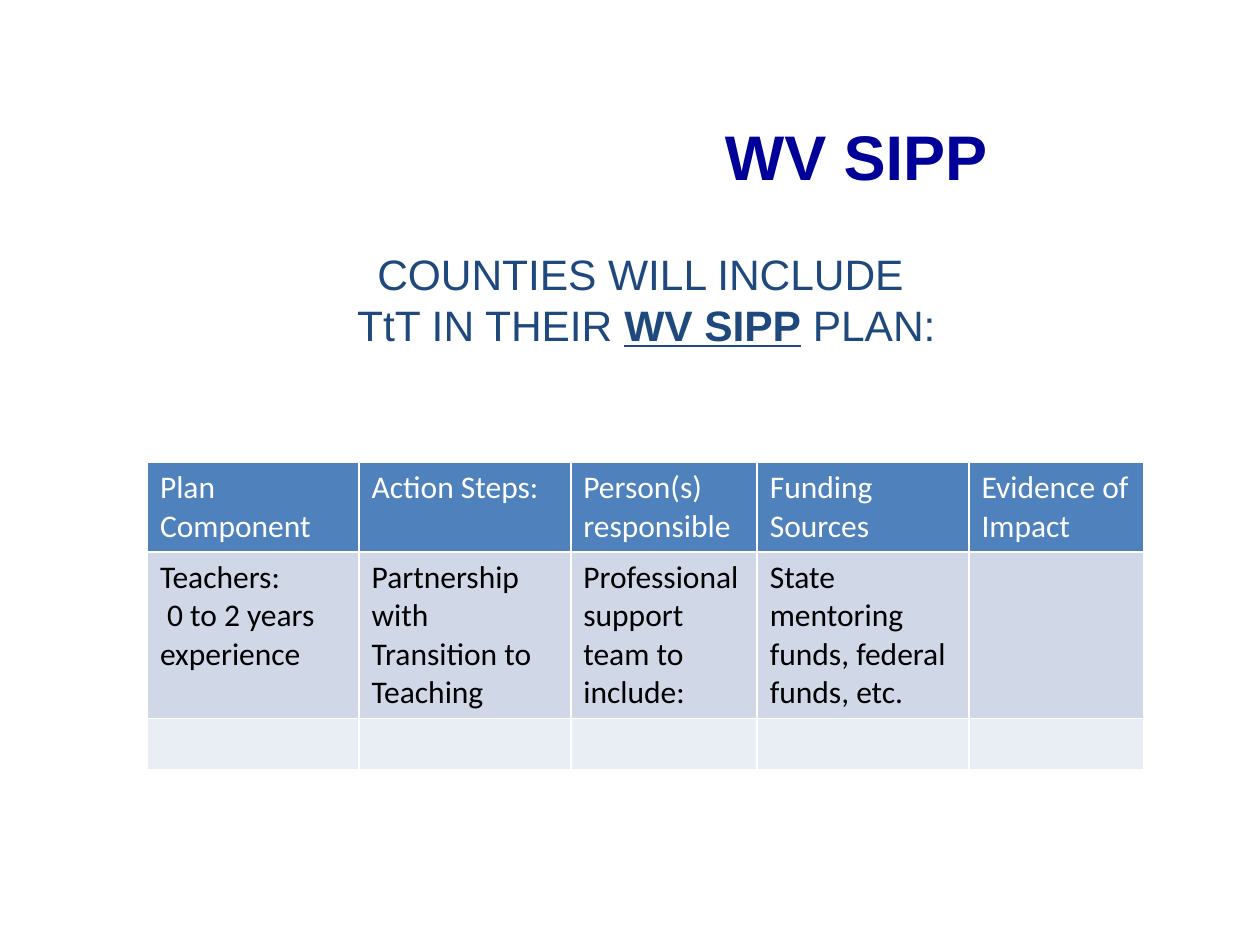
import pptx
import pptx.util
import pptx.dml.color
import pptx.enum.text
from dataclasses import dataclass


@dataclass(frozen=True)
class Theme:
    heading_font: str = "Arial"
    table_font: str = "Calibri"
    heading_size: float = 36
    title_size: float = 24.3
    title_leading: float = 29.1
    table_size: float = 18
    heading: str = "000099"
    title: str = "1F497D"
    header_text: str = "FFFFFF"
    body_text: str = "000000"
    row_fills: tuple = ("4F81BD", "D0D8E8", "E9EDF4")


theme = Theme()
Inches = pptx.util.Inches
Color = pptx.dml.color.RGBColor.from_string


def add_span(para, text, font, size, color, bold=False, underline=False):
    span = para.add_run()
    span.text = text
    span.font.name = font
    span.font.size = pptx.util.Pt(size)
    span.font.color.rgb = Color(color)
    span.font.bold = bold
    span.font.underline = underline


def set_frame(box, left, top, width, height):
    box.left, box.top = Inches(left), Inches(top)
    box.width, box.height = Inches(width), Inches(height)
    frame = box.text_frame
    frame.word_wrap = True
    frame.auto_size = pptx.enum.text.MSO_AUTO_SIZE.NONE
    frame.vertical_anchor = pptx.enum.text.MSO_ANCHOR.TOP
    para = frame.paragraphs[0]
    para.alignment = pptx.enum.text.PP_ALIGN.CENTER
    return para


deck = pptx.Presentation()
deck.slide_width, deck.slide_height = Inches(10), Inches(7.5)
page = deck.slides.add_slide(deck.slide_layouts[5])

para = set_frame(page.shapes.title, 1.17, 1.92, 7.92, 1.33)
para.line_spacing = pptx.util.Pt(theme.title_leading)
title_style = (theme.heading_font, theme.title_size, theme.title)
add_span(para, "COUNTIES WILL INCLUDE ", *title_style)
para.add_line_break()
add_span(para, "TtT IN THEIR ", *title_style)
add_span(para, "WV SIPP", *title_style, bold=True, underline=True)
add_span(para, " PLAN:", *title_style)

column_widths = [1.68, 1.68, 1.48, 1.68, 1.39]
row_heights = [0.7, 1.32, 0.41]
plan_rows = [
    ["Plan Component", "Action Steps:", "Person(s) responsible",
     "Funding Sources", "Evidence of Impact"],
    ["Teachers:\n 0 to 2 years experience",
     "Partnership with Transition to Teaching",
     "Professional support team to include:",
     "State mentoring funds, federal funds, etc.", ""],
    [""] * 5,
]
plan_table = page.shapes.add_table(
    len(row_heights), len(column_widths), Inches(1.17), Inches(3.67),
    Inches(sum(column_widths)), Inches(sum(row_heights))).table
for column, width in zip(plan_table.columns, column_widths):
    column.width = Inches(width)
for row_index, texts in enumerate(plan_rows):
    row = plan_table.rows[row_index]
    row.height = Inches(row_heights[row_index])
    color = theme.body_text if row_index else theme.header_text
    for cell, text in zip(row.cells, texts):
        cell.fill.solid()
        cell.fill.fore_color.rgb = Color(theme.row_fills[row_index])
        if not text:
            continue
        for line_index, line in enumerate(text.split("\n")):
            frame = cell.text_frame
            para = frame.add_paragraph() if line_index else frame.paragraphs[0]
            add_span(para, line, theme.table_font, theme.table_size, color)

heading_box = page.shapes.add_textbox(0, 0, 0, 0)
para = set_frame(heading_box, 4.17, 0.83, 5.25, 1.25)
heading_box.text_frame.margin_top = Inches(0.1)
add_span(para, "WV SIPP", theme.heading_font, theme.heading_size,
         theme.heading, bold=True)

deck.save("out.pptx")
